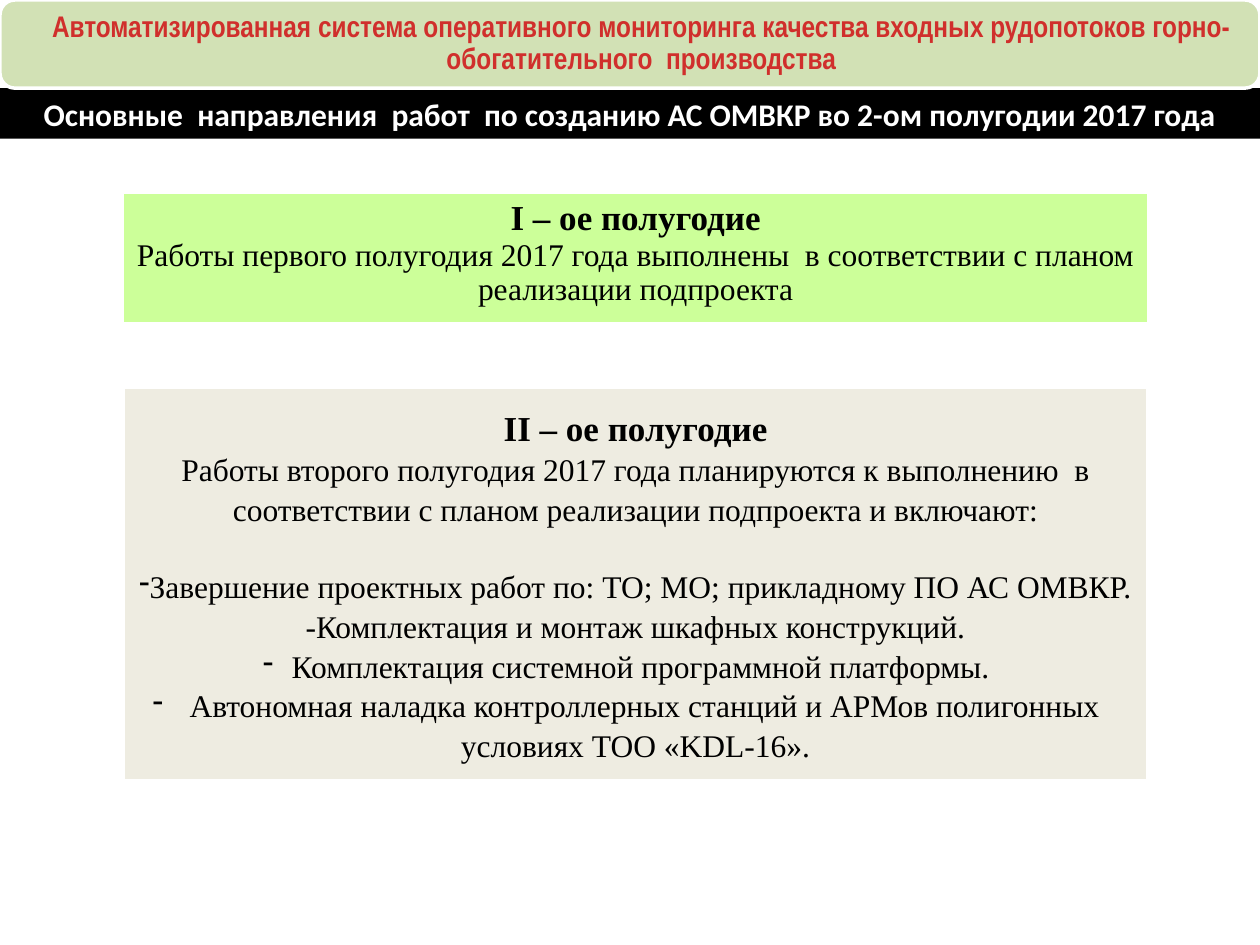
from pptx import Presentation
from pptx.dml.color import RGBColor
from pptx.enum import shapes, text
from pptx.util import Inches, Pt
from lxml import etree

WHITE = RGBColor(0xFF, 0xFF, 0xFF)
BLACK = RGBColor(0, 0, 0)
RED = RGBColor(0xD0, 0x2F, 0x2C)
SAGE = RGBColor(0xD2, 0xE1, 0xB5)
LIME = RGBColor(0xCC, 0xFF, 0x99)
SAND = RGBColor(0xEE, 0xEC, 0xE1)
SERIF = "Times New Roman"
CENTER = text.PP_ALIGN.CENTER
MIDDLE = text.MSO_ANCHOR.MIDDLE
NS = "{http://schemas.openxmlformats.org/drawingml/2006/main}"


def write(par, words, size, color=BLACK, face=SERIF, bold=False):
    par.text = words
    par.alignment = CENTER
    font = par.font
    font.name, font.size, font.bold = face, Pt(size), bold
    font.color.rgb = color


def panel(kind, left, top, width, height, fill):
    """Add a filled shape with a white outline and centred text."""
    box = slide.shapes.add_shape(
        kind, Inches(left), Inches(top), Inches(width), Inches(height))
    box.shadow.inherit = False
    box.fill.solid()
    box.fill.fore_color.rgb = fill
    box.line.color.rgb = WHITE
    box.line.width = Pt(2)
    box.text_frame.word_wrap = True
    box.text_frame.vertical_anchor = MIDDLE
    return box


prs = Presentation()
prs.slide_width, prs.slide_height = Inches(10), Inches(7.5)
slide = prs.slides.add_slide(prs.slide_layouts[5])

# Project banner
banner = panel(shapes.MSO_SHAPE.ROUNDED_RECTANGLE, 0, 0, 10, 0.7, SAGE)
banner.adjustments[0] = 0.17
frame = banner.text_frame
frame.margin_left = Inches(0.28)
frame.margin_right = frame.margin_top = frame.margin_bottom = Inches(0.1)
par = frame.paragraphs[0]
write(par, "Автоматизированная система оперативного мониторинга качества "
      "входных рудопотоков горно-обогатительного  производства",
      17, RED, "Arial Narrow", True)
par.line_spacing = 0.9

# Slide title
title = slide.shapes.title
title.left, title.top = Inches(0), Inches(0.7)
title.width, title.height = Inches(10), Inches(0.4)
title.fill.solid()
title.fill.fore_color.rgb = BLACK
title.text_frame.auto_size = text.MSO_AUTO_SIZE.NONE
title.text_frame.vertical_anchor = MIDDLE
write(title.text_frame.paragraphs[0],
      "Основные  направления  работ  по созданию АС ОМВКР "
      "во 2-ом полугодии 2017 года", 18, WHITE, "Calibri", True)

# First half of the year
table = slide.shapes.add_table(
    1, 1, Inches(0.98), Inches(1.53), Inches(8.13), Inches(1.03)).table
cell = table.cell(0, 0)
cell.fill.solid()
cell.fill.fore_color.rgb = LIME
frame = cell.text_frame
write(frame.paragraphs[0], "I – ое полугодие", 20, bold=True)
write(frame.add_paragraph(), "Работы первого полугодия 2017 года выполнены  "
      "в соответствии с планом реализации подпроекта", 18)

# Second half of the year
plan = panel(shapes.MSO_SHAPE.RECTANGLE, 0.98, 3.07, 8.13, 3.13, SAND)
frame = plan.text_frame
write(frame.paragraphs[0], "II – ое полугодие", 20, bold=True)
write(frame.add_paragraph(), "Работы второго полугодия 2017 года планируются "
      "к выполнению  в соответствии с планом реализации подпроекта "
      "и включают:", 18)
tasks = [
    ("Завершение проектных работ по: ТО; МО; прикладному ПО АС ОМВКР.", 0),
    ("-Комплектация и монтаж шкафных конструкций.", None),
    ("Комплектация системной программной платформы.", -0.23),
    (" Автономная наладка контроллерных станций и АРМов полигонных "
     "условиях ТОО «KDL-16».", -0.23),
]
for row, (words, indent) in enumerate(tasks):
    par = frame.add_paragraph()
    if indent is not None:
        props = par._p.get_or_add_pPr()
        props.set("marL", "0")
        props.set("indent", str(Inches(indent)))
        etree.SubElement(props, NS + "buFontTx")
        etree.SubElement(props, NS + "buChar", char="-")
    write(par, words, 18)
    if row == 0:
        par.space_before = Pt(21.7)
for par in frame.paragraphs:
    par.line_spacing = 1.05

prs.save("out.pptx")
